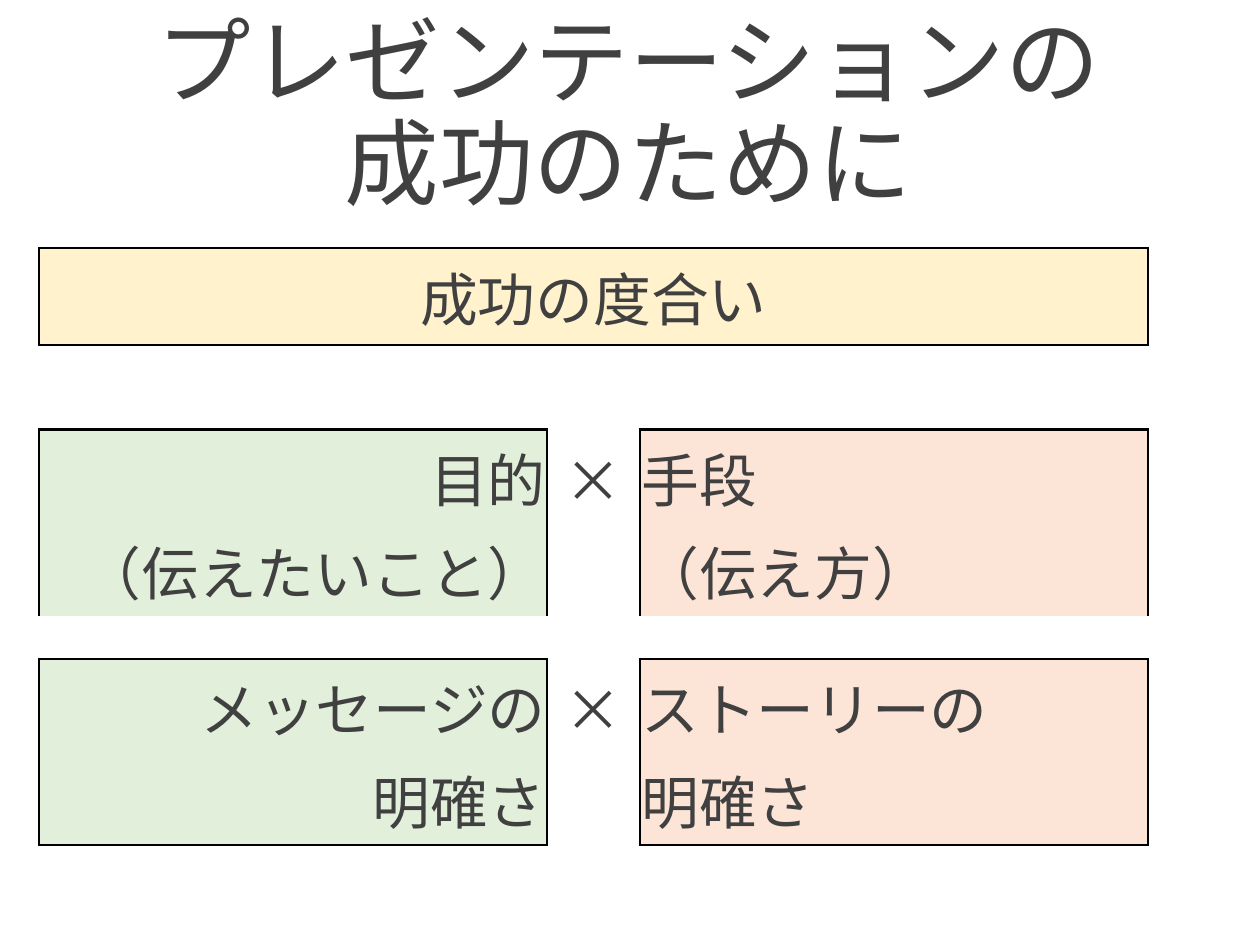
from lxml.etree import SubElement
from pptx import Presentation
from pptx.dml.color import RGBColor
from pptx.enum.text import MSO_ANCHOR, MSO_AUTO_SIZE, PP_ALIGN
from pptx.oxml.ns import qn
from pptx.util import Inches, Pt

FONT = "Noto Sans CJK JP"
TEXT, BLACK = "404040", "000000"
YELLOW, GREEN, ORANGE = "FFF2CC", "E2EFDA", "FCE4D6"


def write(text_frame, text, size, alignment):
    text_frame.text = text
    paragraph = text_frame.paragraphs[0]
    paragraph.alignment = alignment
    for run in paragraph.runs:
        for name, value in {"name": FONT, "size": Pt(size)}.items():
            setattr(run.font, name, value)
        run.font.color.rgb = RGBColor.from_string(TEXT)
        SubElement(run.font._element, qn("a:ea"), typeface=FONT)
    return paragraph


def draw_borders(cell, sides):
    properties = cell._tc.get_or_add_tcPr()
    for side in "LRTB":
        line = SubElement(properties, qn(f"a:ln{side}"), w=str(Pt(1.5)))
        if side in sides:
            fill = SubElement(line, qn("a:solidFill"))
            SubElement(fill, qn("a:srgbClr"), val=BLACK)
        else:
            SubElement(line, qn("a:noFill"))


presentation = Presentation()
presentation.slide_width, presentation.slide_height = Inches(10), Inches(7.5)
slide = presentation.slides.add_slide(presentation.slide_layouts[5])

# Title
title = slide.shapes.title
title.left, title.top = Inches(0.08), Inches(0)
title.width, title.height = Inches(9.81), Inches(1.86)
title_format = {"word_wrap": True, "auto_size": MSO_AUTO_SIZE.NONE,
                "vertical_anchor": MSO_ANCHOR.MIDDLE}
for name, value in title_format.items():
    setattr(title.text_frame, name, value)
heading = write(title.text_frame, "プレゼンテーションの\v成功のために", 54, PP_ALIGN.CENTER)
heading.line_spacing = 0.9

# Table grid
column_widths = [4.03, 0.74, 4.03]
row_heights = [0.77, 0.67, 0.74, 0.74, 0.34, 0.74, 0.74]
frame = slide.shapes.add_table(
    len(row_heights), len(column_widths), Inches(0.31), Inches(1.97),
    Inches(sum(column_widths)), Inches(sum(row_heights)))
table = frame.table
table.first_row = table.horz_banding = False
for column, width in zip(table.columns, column_widths):
    column.width = Inches(width)
for row, height in zip(table.rows, row_heights):
    row.height = Inches(height)
table.cell(0, 0).merge(table.cell(0, 2))

# Cell contents, borders and fills
rows = [
    ("成功の度合い", "", ""),
    ("", "", ""),
    ("目的", "×", "手段"),
    ("（伝えたいこと）", "", "（伝え方）"),
    ("", "", ""),
    ("メッセージの", "×", "ストーリーの"),
    ("明確さ", "", "明確さ"),
]
block_edges = {2: "LRT", 3: "LRB", 5: "LRT", 6: "LRB"}
alignments = [PP_ALIGN.RIGHT, PP_ALIGN.CENTER, PP_ALIGN.LEFT]
fills = [GREEN, None, ORANGE]

for row_index, texts in enumerate(rows):
    for column_index, text in enumerate(texts):
        cell = table.cell(row_index, column_index)
        alignment, color, edges = alignments[column_index], None, ""
        if row_index == 0:
            alignment, color, edges = PP_ALIGN.CENTER, YELLOW, "LRTB"
        elif row_index == 1:
            edges = "T"
        elif row_index in block_edges:
            color = fills[column_index]
            edges = block_edges[row_index] if color else "LR"
        cell_format = {"vertical_anchor": MSO_ANCHOR.MIDDLE,
                       "margin_left": Inches(0.01), "margin_right": Inches(0.01),
                       "margin_top": Inches(0.01), "margin_bottom": Inches(0)}
        if row_index == 0:
            cell_format.update(margin_top=Inches(0.05), margin_bottom=Inches(0.05))
        for name, value in cell_format.items():
            setattr(cell, name, value)
        draw_borders(cell, edges)
        if color:
            cell.fill.solid()
            cell.fill.fore_color.rgb = RGBColor.from_string(color)
        else:
            cell.fill.background()
        paragraph = write(cell.text_frame, text, 33, alignment)
        if not text:  # keep empty cells from stretching their row
            SubElement(paragraph._p, qn("a:endParaRPr"), sz="1000")

presentation.save("out.pptx")
